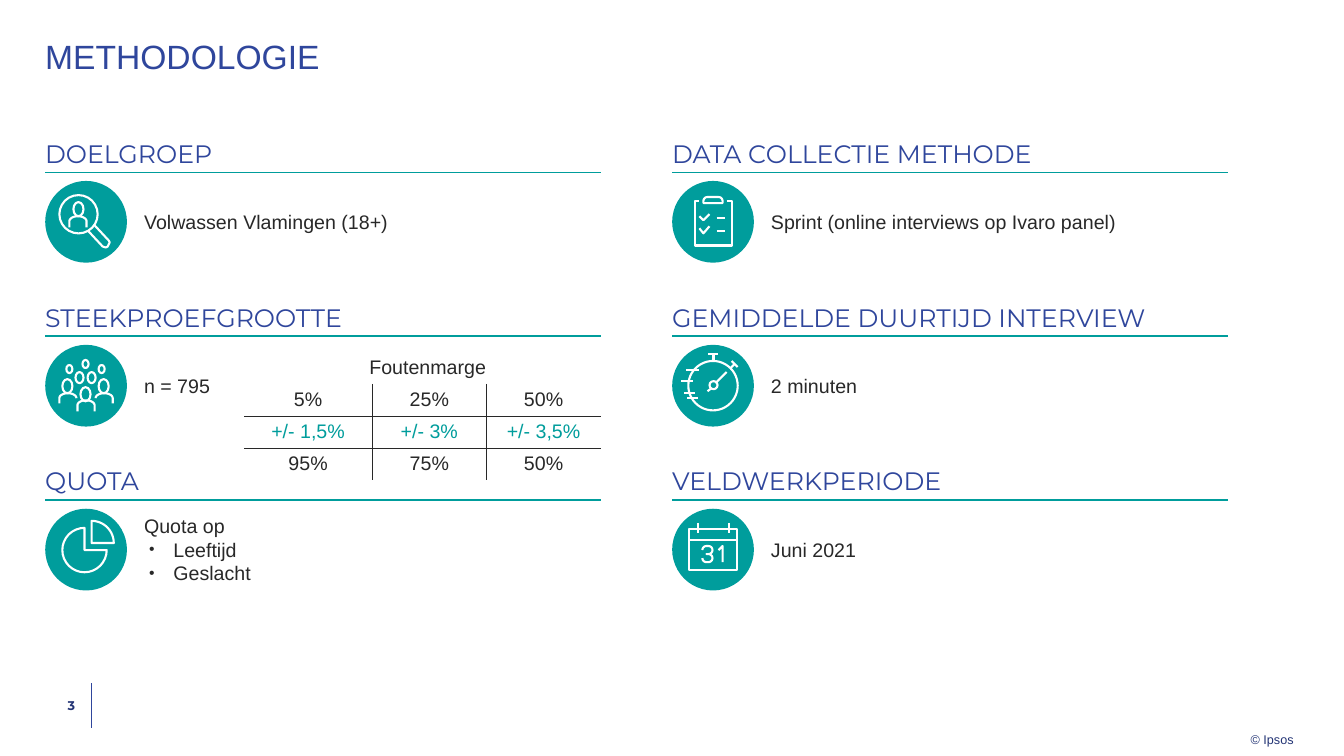
"""Builds the methodology slide: six sections with icons and an error margin table."""
from math import cos, radians, sin

from lxml.etree import SubElement
from pptx import Presentation
from pptx.dml.color import RGBColor
from pptx.enum.shapes import MSO_CONNECTOR, MSO_SHAPE
from pptx.enum.text import MSO_ANCHOR, MSO_AUTO_SIZE, PP_ALIGN
from pptx.oxml.ns import qn
from pptx.util import Cm, Pt

BLUE = RGBColor(0x2F, 0x46, 0x9C)
NAVY = RGBColor(0x23, 0x34, 0x75)
TEAL = RGBColor(0x00, 0x9D, 0x9C)
DARK = RGBColor(0x28, 0x28, 0x28)
WHITE = RGBColor(0xFF, 0xFF, 0xFF)

TITLE = "METHODOLOGIE"
SECTIONS = [
    [("DOELGROEP", ["Volwassen Vlamingen (18+)"], "magnifier"),
     ("STEEKPROEFGROOTTE", ["n = 795"], "crowd"),
     ("QUOTA", ["Quota op", "Leeftijd", "Geslacht"], "pie")],
    [("DATA COLLECTIE METHODE", ["Sprint (online interviews op Ivaro panel)"], "clipboard"),
     ("GEMIDDELDE DUURTIJD INTERVIEW", ["2 minuten"], "stopwatch"),
     ("VELDWERKPERIODE", ["Juni 2021"], "calendar")],
]
MARGIN_HEADER = "Foutenmarge"
MARGIN_ROWS = [
    ("5%", "25%", "50%"),
    ("+/- 1,5%", "+/- 3%", "+/- 3,5%"),
    ("95%", "75%", "50%"),
]
PAGE_NUMBER = "3"
COPYRIGHT = "© Ipsos"


def arc(cx, cy, rx, ry, start, end, steps=24):
    angles = [radians(start + (end - start) * i / steps) for i in range(steps + 1)]
    return [(cx + rx * cos(a), cy + ry * sin(a)) for a in angles]


def shoulders(x, y, left_drop=6, right_drop=6):
    return ([(x, y + 5 + left_drop)] + arc(x + 8.5, y + 5, 8.5, 5, 180, 360)
            + [(x + 17, y + 5 + right_drop)])


ICONS = {
    "magnifier": {
        "ovals": [(14, 14, 38, 38), (28, 21, 10, 14)],
        "strokes": [shoulders(24, 35),
                    [(49, 44), (63, 59), (64, 61), (63, 63), (62, 65), (60, 66),
                     (57, 65), (43, 50)]],
    },
    "crowd": {
        "ovals": [(35, 42, 10, 14), (17, 34, 10, 14), (53, 34, 10, 14),
                  (30, 27, 8, 11), (42, 27, 8, 11),
                  (37, 15, 6, 8), (21, 20, 6, 8), (53, 20, 6, 8)],
        "strokes": [shoulders(32, 55), shoulders(14, 48, 5, 0), shoulders(50, 48, 0, 5)],
    },
    "pie": {
        "outlines": [[(39, 41)] + arc(39, 41, 22, 22, 270, 0),
                     [(46, 34)] + arc(46, 34, 22, 22, 0, -90)],
    },
    "clipboard": {
        "outlines": [[(50, 22), (31, 22)] + arc(35, 20, 4, 4, 180, 270, 6)
                     + arc(46, 20, 4, 4, 270, 360, 6)],
        "strokes": [[(54, 20), (59, 20), (59, 64), (23, 64), (23, 20), (27, 20)],
                    [(27, 35), (31, 39), (37, 33)], [(27, 47), (31, 52), (37, 45)],
                    [(44, 37), (52, 37)], [(44, 50), (52, 50)]],
    },
    "stopwatch": {
        "ovals": [(16, 16, 49, 49), (37, 36, 8, 8)],
        "strokes": [[(36, 9), (45, 9)], [(41, 9), (41, 16)], [(59, 16), (65, 22)],
                    [(62, 19), (58, 23)], [(39, 43), (35, 46)], [(14, 25), (27, 25)],
                    [(9, 36), (21, 36)], [(12, 48), (23, 48)], [(15, 53), (26, 53)],
                    [(54, 27), (43, 38)]],
    },
    "calendar": {
        "outlines": [[(17, 20), (64, 20), (64, 61), (17, 61)]],
        "strokes": [[(17, 31), (64, 31)], [(56, 14), (56, 24)], [(26, 14), (26, 24)],
                    [(50, 53), (50, 37), (46, 41)],
                    arc(34, 41, 4, 4, 180, 270, 6) + arc(36, 41, 4, 4, 270, 450, 12)
                    + [(34, 45)] + arc(36, 49, 4, 4, 270, 450, 12)
                    + arc(34, 49, 4, 4, 90, 180, 6)],
    },
}

COLUMN_LEFTS = (1.14, 16.94)
COLUMN_WIDTH = 14
FIRST_RULE, ROW_PITCH = 4.34, 4.13
HEADING_HEIGHT = 1
DISC_GAP, DISC_SIZE = 0.22, 2.06
BODY_INDENT, BODY_LINE = 2.49, 0.6
ICON_UNIT = 0.0254


def draw_line(shapes, start, end, color, width):
    line = shapes.add_connector(MSO_CONNECTOR.STRAIGHT, *map(Cm, start + end))
    line.line.color.rgb = color
    line.line.width = Pt(width)
    SubElement(line._element.spPr, qn("a:effectLst"))


def style_outline(shape):
    shape.shadow.inherit = False
    shape.fill.background()
    shape.line.color.rgb = WHITE
    shape.line.width = Pt(1.5)


def draw_icon(slide, left, top, icon):
    shapes = slide.shapes.add_group_shape().shapes
    disc = shapes.add_shape(MSO_SHAPE.OVAL, Cm(left), Cm(top), Cm(DISC_SIZE), Cm(DISC_SIZE))
    disc.shadow.inherit = False
    disc.fill.solid()
    disc.fill.fore_color.rgb = TEAL
    disc.line.fill.background()

    def place(point):
        return left + point[0] * ICON_UNIT, top + point[1] * ICON_UNIT

    for x, y, width, height in icon.get("ovals", []):
        style_outline(shapes.add_shape(MSO_SHAPE.OVAL, *map(Cm, place((x, y))),
                                       Cm(width * ICON_UNIT), Cm(height * ICON_UNIT)))
    for kind in ("outlines", "strokes"):
        for points in icon.get(kind, []):
            placed = [place(point) for point in points]
            if len(placed) == 2:
                draw_line(shapes, *placed, WHITE, 1.5)
                continue
            corners = [(Cm(x), Cm(y)) for x, y in placed]
            builder = shapes.build_freeform(*corners[0])
            builder.add_line_segments(corners[1:], close=kind == "outlines")
            style_outline(builder.convert_to_shape())


def write(paragraph, text, size, color, font="Arial", bold=False):
    run = paragraph.add_run()
    run.text = text
    run.font.size, run.font.name, run.font.bold = Pt(size), font, bold
    run.font.color.rgb = color


def set_insets(frame, left=0, top=0, right=0, bottom=0):
    frame.margin_left, frame.margin_top = Cm(left), Cm(top)
    frame.margin_right, frame.margin_bottom = Cm(right), Cm(bottom)


def add_text(slide, box, anchor, wrap=True, **insets):
    frame = slide.shapes.add_textbox(*map(Cm, box)).text_frame
    frame.word_wrap, frame.vertical_anchor = wrap, anchor
    set_insets(frame, **insets)
    return frame


def add_bullet(paragraph):
    paragraph.level = 1
    properties = paragraph._p.get_or_add_pPr()
    properties.set("marL", str(Cm(0.74)))
    properties.set("indent", str(-Cm(0.61)))
    SubElement(properties, qn("a:buSzPct"), val="80000")
    SubElement(properties, qn("a:buFont"), typeface="Arial")
    SubElement(properties, qn("a:buChar"), char="•")


def add_section(slide, left, rule, heading, lines, icon_name):
    frame = add_text(slide, (left, rule - HEADING_HEIGHT, COLUMN_WIDTH, HEADING_HEIGHT),
                     MSO_ANCHOR.BOTTOM, bottom=0.1)
    write(frame.paragraphs[0], heading, 18, BLUE, "Montserrat")
    draw_line(slide.shapes, (left, rule), (left + COLUMN_WIDTH, rule), TEAL, 1)
    disc_top = rule + DISC_GAP
    draw_icon(slide, left, disc_top, ICONS[icon_name])
    height = BODY_LINE * len(lines)
    body = add_text(slide, (left + BODY_INDENT, disc_top + (DISC_SIZE - height) / 2,
                            COLUMN_WIDTH - BODY_INDENT, height), MSO_ANCHOR.MIDDLE)
    for i, line in enumerate(lines):
        paragraph = body.add_paragraph() if i else body.paragraphs[0]
        if i:
            add_bullet(paragraph)
        write(paragraph, line, 14, DARK)


def set_borders(cell, **sides):
    for side in "LRTB":
        border = SubElement(cell._tc.get_or_add_tcPr(), qn(f"a:ln{side}"), w=str(Pt(0.25)))
        if sides.get(side):
            fill = SubElement(border, qn("a:solidFill"))
            SubElement(fill, qn("a:srgbClr"), val=str(DARK))
        else:
            SubElement(border, qn("a:noFill"))


def add_margin_table(slide):
    rows = [(MARGIN_HEADER, "", "")] + MARGIN_ROWS
    table = slide.shapes.add_table(4, 3, Cm(6.15), Cm(8.86), Cm(8.99), Cm(3.24)).table
    table.first_row = table.horz_banding = False
    for column, width in zip(table.columns, (3.23, 2.88, 2.88)):
        column.width = Cm(width)
    for r, row in enumerate(rows):
        table.rows[r].height = Cm(0.81)
        for c, text in enumerate(row):
            cell = table.cell(r, c)
            set_borders(cell, L=r and c, R=r and c < 2, T=r > 1, B=r in (1, 2))
            cell.fill.background()
            set_insets(cell, left=0.1 if r else 0.37, right=0.1)
            cell.vertical_anchor = MSO_ANCHOR.MIDDLE
            paragraph = cell.text_frame.paragraphs[0]
            paragraph.alignment = PP_ALIGN.CENTER
            if text:
                write(paragraph, text, 14, TEAL if r == 2 else DARK)
    table.cell(0, 0).merge(table.cell(0, 2))


def main():
    deck = Presentation()
    deck.slide_width, deck.slide_height = Cm(33.87), Cm(19.05)
    slide = deck.slides.add_slide(deck.slide_layouts[5])
    title = slide.shapes.title
    title.left, title.top, title.width, title.height = map(Cm, (1.14, 1.02, 31.6, 1.07))
    frame = title.text_frame
    frame.auto_size, frame.vertical_anchor = MSO_AUTO_SIZE.NONE, MSO_ANCHOR.TOP
    set_insets(frame)
    frame.paragraphs[0].alignment = PP_ALIGN.LEFT
    frame.paragraphs[0].line_spacing = 0.9
    write(frame.paragraphs[0], TITLE, 24, BLUE)

    for left, sections in zip(COLUMN_LEFTS, SECTIONS):
        for row, section in enumerate(sections):
            add_section(slide, left, FIRST_RULE + row * ROW_PITCH, *section)
    add_margin_table(slide)

    draw_line(slide.shapes, (2.29, 17.22), (2.29, 18.34), BLUE, 0.5)
    number = add_text(slide, (1.14, 17.22, 1.15, 1.1), MSO_ANCHOR.MIDDLE, right=0.4)
    number.paragraphs[0].alignment = PP_ALIGN.RIGHT
    write(number.paragraphs[0], PAGE_NUMBER, 9, NAVY, "Montserrat", True)
    owner = add_text(slide, (31.52, 18.34, 1.09, 0.48), MSO_ANCHOR.TOP, wrap=False, top=0.1)
    write(owner.paragraphs[0], COPYRIGHT, 9, NAVY)
    deck.save("out.pptx")


if __name__ == "__main__":
    main()
